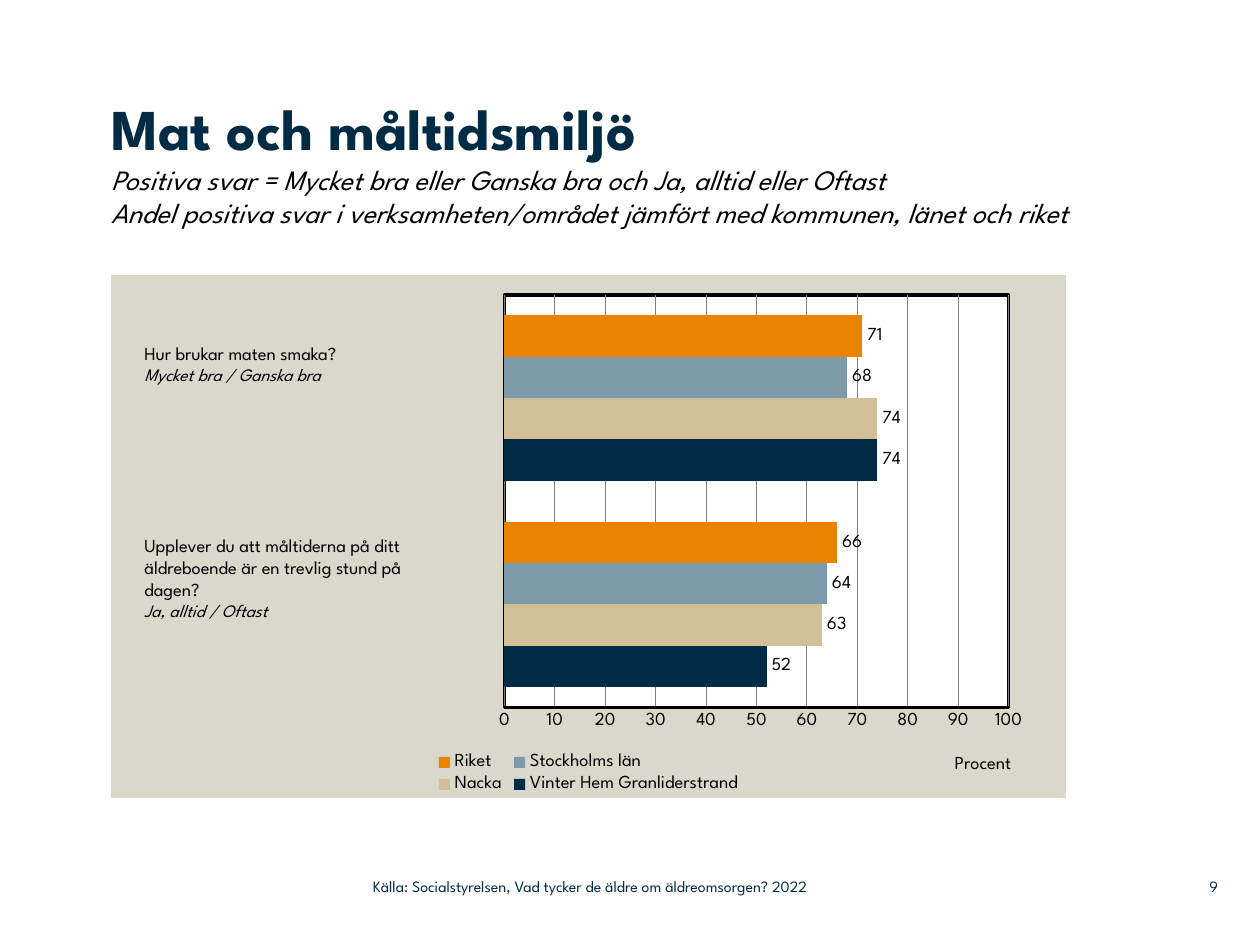
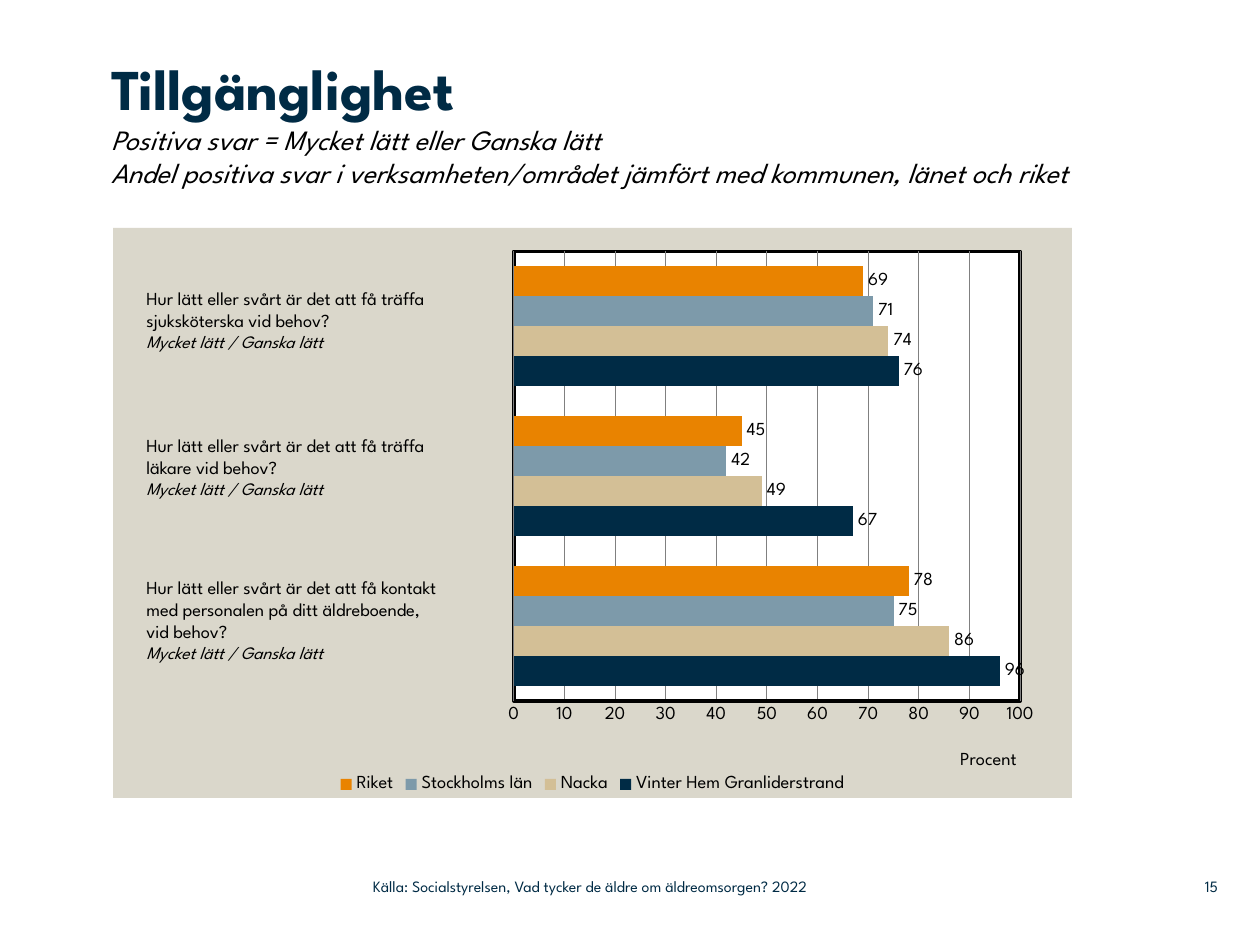
from pptx import Presentation
from pptx import util as u
from pptx.chart import data
from pptx.dml import color
from pptx.enum import chart as ch, text
from pptx.oxml import parse_xml
from pptx.oxml.ns import nsdecls, qn

PX = 914400 / 126
FONT = "League Spartan"
NAVY, BLACK, WHITE, PANEL, GRID = "002B45", "000000", "FFFFFF", "DAD7CB", "808080"
SERIES = [
    ("Vinter Hem Granliderstrand", NAVY),
    ("Nacka", "D3BF96"),
    ("Stockholms län", "7D9AAA"),
    ("Riket", "E98300"),
]
SCOPE = "Andel positiva svar i verksamheten/området jämfört med kommunen, länet och riket"
SOURCE = "Källa: Socialstyrelsen, Vad tycker de äldre om äldreomsorgen? 2022"

FOOD = {
    "title": "Mat och måltidsmiljö",
    "subtitle": "Positiva svar = Mycket bra eller Ganska bra och Ja, alltid eller Oftast",
    "title_box": (111, 93, 1061, 181),
    "chart_box": (111, 275, 955, 523),
    "plot": (0.412, 0.038),
    "values": [(52, 74), (63, 74), (64, 68), (66, 71)],
    "question_width": 349,
    "questions": [
        (61, ["Hur brukar maten smaka?"], "Mycket bra / Ganska bra"),
        (253, ["Upplever du att måltiderna på ditt äldreboende är en trevlig stund på",
               "dagen?"], "Ja, alltid / Oftast"),
    ],
    "number": "9",
}
ACCESS = {
    "title": "Tillgänglighet",
    "subtitle": "Positiva svar = Mycket lätt eller Ganska lätt",
    "title_box": (111, 53, 979, 175),
    "chart_box": (113, 228, 959, 570),
    "plot": (0.418, 0.041),
    "values": [(96, 67, 76), (86, 49, 74), (75, 42, 71), (78, 45, 69)],
    "question_width": 377,
    "questions": [
        (53, ["Hur lätt eller svårt är det att få träffa sjuksköterska vid behov?"],
         "Mycket lätt / Ganska lätt"),
        (200, ["Hur lätt eller svårt är det att få träffa", "läkare vid behov?"],
         "Mycket lätt / Ganska lätt"),
        (342, ["Hur lätt eller svårt är det att få kontakt",
               "med personalen på ditt äldreboende,", "vid behov?"],
         "Mycket lätt / Ganska lätt"),
    ],
    "number": "15",
}


def px(*lengths):
    return [u.Emu(round(length * PX)) for length in lengths]


def rgb(value):
    return color.RGBColor.from_string(value)


def style(font, size, shade=BLACK, bold=False, italic=False):
    font.name, font.size, font.bold, font.italic = FONT, u.Pt(size), bold, italic
    font.color.rgb = rgb(shade)


def remove_margins(frame):
    frame.margin_left = frame.margin_top = frame.margin_right = frame.margin_bottom = 0


def add_title(page, content):
    title = page.shapes.title
    title.left, title.top, title.width, title.height = px(*content["title_box"])
    frame = title.text_frame
    remove_margins(frame)
    frame.word_wrap = True
    frame.auto_size = text.MSO_AUTO_SIZE.NONE
    frame.vertical_anchor = text.MSO_ANCHOR.TOP
    para = frame.paragraphs[0]
    para.alignment = text.PP_ALIGN.LEFT
    span = para.add_run()
    span.text = content["title"]
    style(span.font, 33, NAVY, bold=True)
    for line in (content["subtitle"], SCOPE):
        para.add_line_break()
        span = para.add_run()
        span.text = line
        style(span.font, 16, italic=True)


def fill_xml(fill, line):
    return parse_xml(
        f'<c:spPr {nsdecls("c", "a")}><a:solidFill><a:srgbClr val="{fill}"/></a:solidFill>'
        f'<a:ln w="25400">{line}</a:ln></c:spPr>')


def set_layout(parent, index, **places):
    for old in parent.findall(qn("c:layout")):
        parent.remove(old)
    target = '<c:layoutTarget val="inner"/>' if "w" in places else ""
    modes = "".join(f'<c:{key}Mode val="edge"/>' for key in "xy")
    values = "".join(f'<c:{key} val="{value}"/>' for key, value in places.items())
    parent.insert(index, parse_xml(
        f'<c:layout {nsdecls("c")}><c:manualLayout>{target}{modes}{values}'
        '</c:manualLayout></c:layout>'))


def style_value_axis(axis):
    axis.minimum_scale, axis.maximum_scale, axis.major_unit = 0, 100, 10
    axis.major_tick_mark = axis.minor_tick_mark = ch.XL_TICK_MARK.NONE
    axis.format.line.color.rgb = rgb(BLACK)
    axis.format.line.width = u.Pt(2)
    axis.has_major_gridlines = True
    axis.major_gridlines.format.line.color.rgb = rgb(GRID)
    axis.major_gridlines.format.line.width = u.Pt(0.5)
    style(axis.tick_labels.font, 10.5)
    para = axis.axis_title.text_frame.paragraphs[0]
    para.text = "Procent"
    style(para.font, 10.5)
    set_layout(axis.axis_title.element if hasattr(axis.axis_title, "element")
               else axis.element.find(qn("c:title")), 1, x=0.88, y=0.91)


def add_chart(page, content):
    values = content["values"]
    figures = data.CategoryChartData()
    figures.categories = [str(n + 1) for n in range(len(values[0]))]
    for (name, _), row in zip(SERIES, values):
        figures.add_series(name, row)
    chart = page.shapes.add_chart(
        ch.XL_CHART_TYPE.BAR_CLUSTERED, *px(*content["chart_box"]), figures).chart
    style(chart.font, 10.5)
    chart.has_title = False
    chart.has_legend = True
    chart.legend.position = ch.XL_LEGEND_POSITION.BOTTOM
    chart.legend.include_in_layout = False
    style(chart.legend.font, 10.5)
    chart.category_axis.visible = False
    style_value_axis(chart.value_axis)

    plot = chart.plots[0]
    plot.gap_width, plot.overlap, plot.vary_by_categories = 100, 0, False
    for series, (_, shade) in zip(plot.series, SERIES):
        series.format.fill.solid()
        series.format.fill.fore_color.rgb = rgb(shade)
        series.invert_if_negative = False
        labels = series.data_labels
        labels.show_value = True
        labels.position = ch.XL_LABEL_POSITION.OUTSIDE_END
        style(labels.font, 10.5)

    root = chart.element.find(qn("c:chart"))
    area = root.find(qn("c:plotArea"))
    left, top = content["plot"]
    set_layout(area, 0, x=left, y=top, w=0.528, h=0.789)
    border = f'<a:solidFill><a:srgbClr val="{BLACK}"/></a:solidFill>'
    area.append(fill_xml(WHITE, border))
    root.addnext(fill_xml(PANEL, "<a:noFill/>"))


def add_questions(page, content):
    left, top = content["chart_box"][:2]
    for offset, lines, answers in content["questions"]:
        height = 22 * (len(lines) + 1) + 13
        box = page.shapes.add_textbox(
            *px(left + 21, top + offset, content["question_width"], height))
        frame = box.text_frame
        frame.word_wrap = True
        frame.text = "\n".join([*lines, answers])
        *question, answer = frame.paragraphs
        for para in question:
            style(para.font, 10.5)
        style(answer.font, 10, italic=True)


def add_footer(page, number):
    for left, width, words, align in (
        (373, 558, SOURCE, text.PP_ALIGN.LEFT),
        (1159, 59, number, text.PP_ALIGN.RIGHT),
    ):
        frame = page.shapes.add_textbox(*px(left, 868, width, 37)).text_frame
        remove_margins(frame)
        frame.word_wrap = True
        frame.vertical_anchor = text.MSO_ANCHOR.MIDDLE
        para = frame.paragraphs[0]
        para.text, para.alignment = words, align
        style(para.font, 9, NAVY)


def add_result_page(deck, content):
    page = deck.slides.add_slide(deck.slide_layouts[5])
    add_title(page, content)
    add_chart(page, content)
    add_questions(page, content)
    add_footer(page, content["number"])


def main():
    deck = Presentation()
    deck.slide_width, deck.slide_height = px(1260, 945)
    for content in (FOOD, ACCESS):
        add_result_page(deck, content)
    deck.save("out.pptx")


if __name__ == "__main__":
    main()
